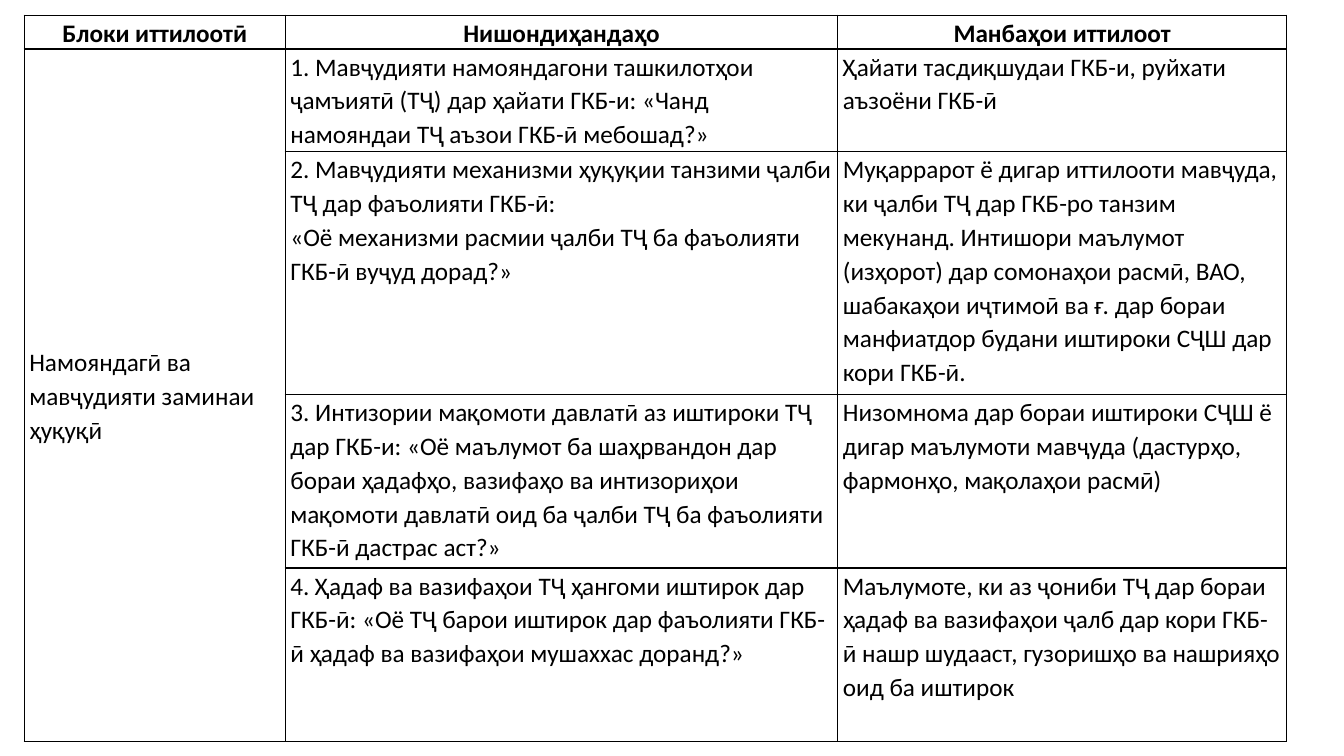
"""Build a slide with the table of information blocks, indicators and sources."""
import lxml.etree
import pptx
import pptx.dml.color
import pptx.enum.text
import pptx.oxml.ns
import pptx.util

BLACK = pptx.dml.color.RGBColor(0x00, 0x00, 0x00)
PX = 9144
BORDER_WIDTH = pptx.util.Pt(1)
ALIGN = pptx.enum.text.PP_ALIGN
ANCHOR = pptx.enum.text.MSO_ANCHOR

column_widths = [259, 548, 445]
row_heights = [33, 102, 241, 172, 172]
headings = ["Блоки иттилоотӣ", "Нишондиҳандаҳо", "Манбаҳои иттилоот"]
block = "Намояндагӣ ва мавҷудияти заминаи ҳуқуқӣ"
indicators = [
    ("1. Мавҷудияти намояндагони ташкилотҳои ҷамъиятӣ (ТҶ) дар ҳайати ГКБ-и: "
     "«Чанд намояндаи ТҶ аъзои ГКБ-ӣ мебошад?»",
     "Ҳайати тасдиқшудаи ГКБ-и, руйхати аъзоёни ГКБ-ӣ"),
    ("2. Мавҷудияти механизми ҳуқуқии танзими ҷалби ТҶ дар фаъолияти ГКБ-ӣ:\n"
     "«Оё механизми расмии ҷалби ТҶ ба фаъолияти ГКБ-ӣ вуҷуд дорад?»",
     "Муқаррарот ё дигар иттилооти мавҷуда, ки ҷалби ТҶ дар ГКБ-ро танзим мекунанд. "
     "Интишори маълумот (изҳорот) дар сомонаҳои расмӣ, ВАО, шабакаҳои иҷтимоӣ ва ғ. "
     "дар бораи манфиатдор будани иштироки СҶШ дар кори ГКБ-ӣ."),
    ("3. Интизории мақомоти давлатӣ аз иштироки ТҶ дар ГКБ-и: «Оё маълумот ба шаҳрвандон "
     "дар бораи ҳадафҳо, вазифаҳо ва интизориҳои мақомоти давлатӣ оид ба ҷалби ТҶ ба "
     "фаъолияти ГКБ-ӣ дастрас аст?»",
     "Низомнома дар бораи иштироки СҶШ ё дигар маълумоти мавҷуда "
     "(дастурҳо, фармонҳо, мақолаҳои расмӣ)"),
    ("4. Ҳадаф ва вазифаҳои ТҶ ҳангоми иштирок дар ГКБ-ӣ: «Оё ТҶ барои иштирок дар "
     "фаъолияти ГКБ-ӣ ҳадаф ва вазифаҳои мушаххас доранд?»",
     "Маълумоте, ки аз ҷониби ТҶ дар бораи ҳадаф ва вазифаҳои ҷалб дар кори ГКБ-ӣ "
     "нашр шудааст, гузоришҳо ва нашрияҳо оид ба иштирок"),
]


def write(cell, text, bold=False, align=ALIGN.LEFT, anchor=ANCHOR.TOP):
    cell.text = text
    cell.vertical_anchor = anchor
    for paragraph in cell.text_frame.paragraphs:
        paragraph.alignment = align
        paragraph.line_spacing = 1.1
        paragraph.font.name = "Calibri"
        paragraph.font.size = pptx.util.Pt(18)
        paragraph.font.bold = bold
        paragraph.font.color.rgb = BLACK


def add_borders(cell):
    properties = cell._tc.get_or_add_tcPr()
    for position, side in enumerate(["lnL", "lnR", "lnT", "lnB"]):
        line = lxml.etree.Element(pptx.oxml.ns.qn(f"a:{side}"), w=str(BORDER_WIDTH))
        fill = lxml.etree.SubElement(line, pptx.oxml.ns.qn("a:solidFill"))
        lxml.etree.SubElement(fill, pptx.oxml.ns.qn("a:srgbClr"), val=str(BLACK))
        properties.insert(position, line)


presentation = pptx.Presentation()
presentation.slide_width = 1333 * PX
presentation.slide_height = 750 * PX
slide = presentation.slides.add_slide(presentation.slide_layouts[6])

indicator_table = slide.shapes.add_table(
    len(row_heights), len(column_widths), 24 * PX, 15 * PX,
    sum(column_widths) * PX, sum(row_heights) * PX).table
for column, width in zip(indicator_table.columns, column_widths):
    column.width = width * PX
for row, height in zip(indicator_table.rows, row_heights):
    row.height = height * PX

for cell in indicator_table.iter_cells():
    cell.margin_left = cell.margin_right = 5 * PX
    cell.margin_top = cell.margin_bottom = 0
    cell.fill.background()
    add_borders(cell)

for column, heading in enumerate(headings):
    write(indicator_table.cell(0, column), heading, bold=True, align=ALIGN.CENTER)

block_cell = indicator_table.cell(1, 0)
block_cell.merge(indicator_table.cell(len(indicators), 0))
write(block_cell, block, anchor=ANCHOR.MIDDLE)

for row, (indicator, source) in enumerate(indicators, start=1):
    write(indicator_table.cell(row, 1), indicator)
    write(indicator_table.cell(row, 2), source)

presentation.save("out.pptx")
